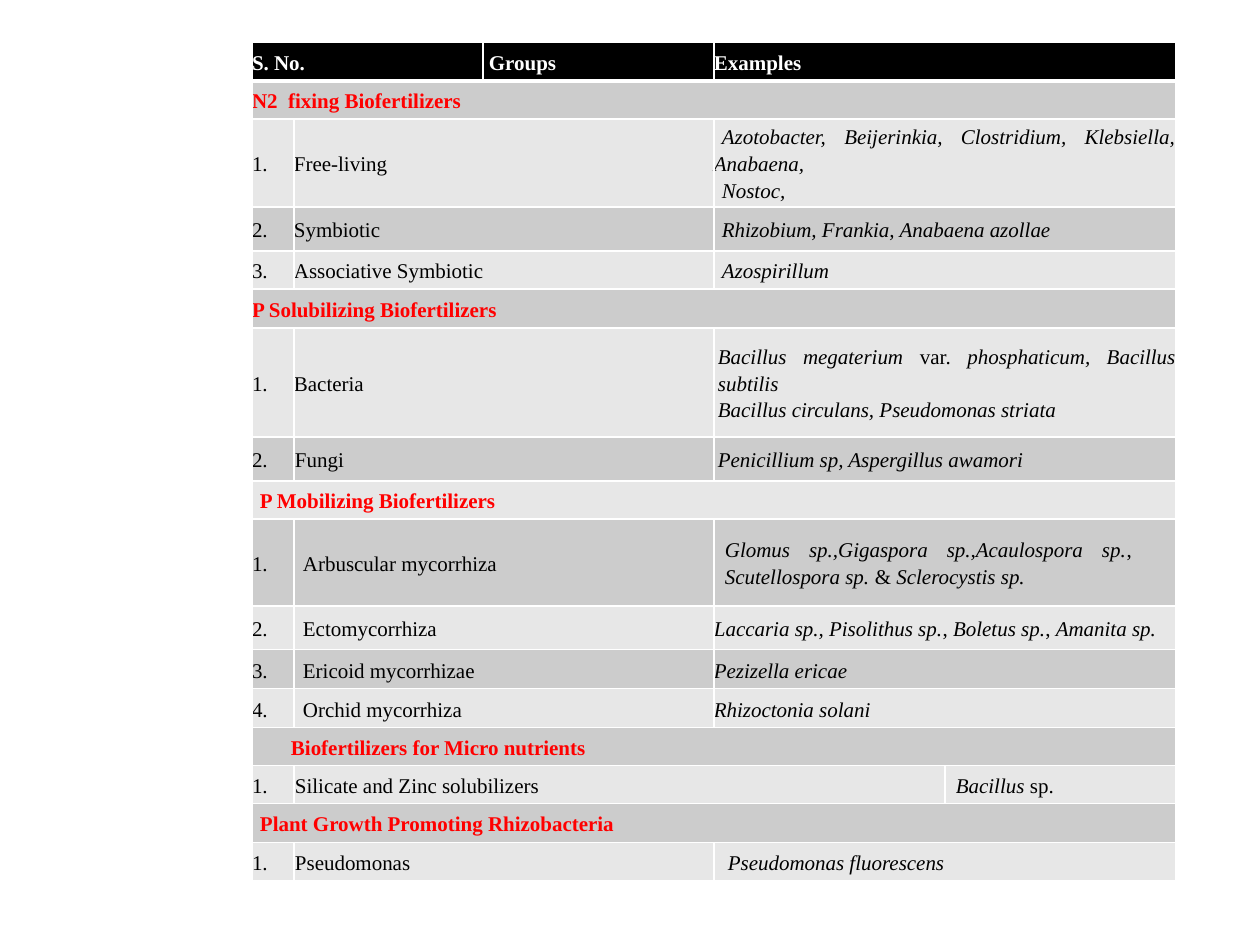
from dataclasses import dataclass

import lxml.etree
import pptx
import pptx.dml.color
import pptx.enum.text
import pptx.oxml.ns
import pptx.util

PX = 914400 // 126


@dataclass(frozen=True)
class Theme:
    font: str = "Times New Roman"
    size: int = 12
    header_fill: str = "000000"
    band_fills: tuple = ("E7E7E7", "CCCCCC")
    border: str = "FFFFFF"
    header_text: str = "FFFFFF"
    section_text: str = "FF0000"
    body_text: str = "000000"


@dataclass(frozen=True)
class Entry:
    """Cell text: *stars* mark italics, \\n a new paragraph, \\v a line break."""
    text: str
    left: int = 0
    first: int = 0
    right: int = 0


def header(*entries):
    return "header", 39, zip(((0, 1), (2, 2), (3, 4)), entries)


def section(height, text, **indents):
    return "section", height, [((0, 4), Entry(text, **indents))]


def item(height, number, group, example, split=3):
    """A numbered row whose example starts at column split."""
    spans = (0, 0), (1, split - 1), (split, 4)
    return "body", height, list(zip(spans, (Entry(number), group, example)))


COLUMNS = [42, 189, 231, 231, 231]
ROWS = [
    header(Entry("S. No."), Entry("Groups", first=6), Entry("Examples")),
    section(38, "N2  fixing Biofertilizers"),
    item(88, "1.", Entry("Free-living"),
         Entry("*Azotobacter, Beijerinkia, Clostridium, Klebsiella, Anabaena,*\n*Nostoc,*", first=8)),
    item(44, "2.", Entry("Symbiotic"), Entry("*Rhizobium, Frankia, Anabaena azollae*", first=8)),
    item(38, "3.", Entry("Associative Symbiotic"), Entry("*Azospirillum*", first=8)),
    section(39, "P Solubilizing Biofertilizers"),
    item(109, "1.", Entry("Bacteria", left=1, first=-1),
         Entry("*Bacillus megaterium* var. *phosphaticum, Bacillus subtilis\v"
               "Bacillus circulans, Pseudomonas striata*", left=4)),
    item(44, "2.", Entry("Fungi", left=1),
         Entry("*Penicillium sp, Aspergillus awamori*", first=4)),
    section(38, "P Mobilizing Biofertilizers", left=8),
    item(87, "1.", Entry("Arbuscular mycorrhiza", left=9),
         Entry("*Glomus sp.,Gigaspora sp.,Acaulospora sp.*, \v"
               "*Scutellospora sp. *& *Sclerocystis sp.*", left=11, right=25)),
    item(44, "2.", Entry("Ectomycorrhiza", left=9),
         Entry("*Laccaria sp., Pisolithus sp.*, *Boletus sp.*, *Amanita sp.*")),
    item(39, "3.", Entry("Ericoid mycorrhizae", left=9), Entry("*Pezizella ericae*")),
    item(39, "4.", Entry("Orchid mycorrhiza", left=9), Entry("*Rhizoctonia solani*")),
    section(38, "Biofertilizers for Micro nutrients", first=39),
    item(38, "1.", Entry("Silicate and Zinc solubilizers", left=1),
         Entry("*Bacillus* sp.", left=11), split=4),
    section(39, "Plant Growth Promoting Rhizobacteria", left=8),
    item(38, "1.", Entry("Pseudomonas", left=1), Entry("*Pseudomonas fluorescens*", left=14)),
]


class SlideBuilder:
    def __init__(self, page, theme):
        self.page = page
        self.theme = theme

    def table(self, left, top, columns, rows):
        heights = [height for _, height, _ in rows]
        frame = self.page.shapes.add_table(
            len(rows), len(columns), left * PX, top * PX, sum(columns) * PX, sum(heights) * PX)
        table = frame.table
        table.horz_banding = False
        for column, width in zip(table.columns, columns):
            column.width = width * PX
        for index, (kind, height, entries) in enumerate(rows):
            table.rows[index].height = height * PX
            is_header = kind == "header"
            fill = self.theme.header_fill if is_header else self.theme.band_fills[index % 2]
            for column in range(len(columns)):
                self.cell_style(table.cell(index, column), fill, 3 if is_header else 1)
            for (start, end), entry in entries:
                cell = table.cell(index, start)
                if end > start:
                    cell.merge(table.cell(index, end))
                self.cell_text(cell, entry, kind)

    def cell_style(self, cell, fill, bottom_width):
        cell.margin_left = cell.margin_right = cell.margin_top = cell.margin_bottom = 0
        cell.vertical_anchor = pptx.enum.text.MSO_ANCHOR.MIDDLE
        qn = pptx.oxml.ns.qn
        properties = cell._tc.get_or_add_tcPr()
        for side, width in (("L", 1), ("R", 1), ("T", 1), ("B", bottom_width)):
            line = lxml.etree.SubElement(properties, qn(f"a:ln{side}"), w=str(width * 12700))
            solid = lxml.etree.SubElement(line, qn("a:solidFill"))
            lxml.etree.SubElement(solid, qn("a:srgbClr"), val=self.theme.border)
        cell.fill.solid()
        cell.fill.fore_color.rgb = pptx.dml.color.RGBColor.from_string(fill)

    def cell_text(self, cell, entry, kind):
        frame = cell.text_frame
        for index, text in enumerate(entry.text.split("\n")):
            para = frame.add_paragraph() if index else frame.paragraphs[0]
            para.alignment = pptx.enum.text.PP_ALIGN.JUSTIFY
            para.line_spacing = 1.15
            properties = para._p.get_or_add_pPr()
            for name, value in (("marL", entry.left), ("marR", entry.right), ("indent", entry.first)):
                properties.set(name, str(value * PX))
            for order, piece in enumerate(text.split("*")):
                self.spans(para, piece, order % 2 == 1, kind)

    def spans(self, para, text, italic, kind):
        colors = {"header": self.theme.header_text, "section": self.theme.section_text,
                  "body": self.theme.body_text}
        for index, part in enumerate(text.split("\v")):
            if index:
                para.add_line_break()
                lxml.etree.SubElement(para._p[-1], pptx.oxml.ns.qn("a:rPr"),
                                      sz=str(self.theme.size * 100))
            if part:
                span = para.add_run()
                span.text = part
                span.font.name = self.theme.font
                span.font.size = pptx.util.Pt(self.theme.size)
                span.font.bold = kind != "body"
                span.font.italic = italic
                span.font.color.rgb = pptx.dml.color.RGBColor.from_string(colors[kind])


def main():
    deck = pptx.Presentation()
    deck.slide_width = 1260 * PX
    deck.slide_height = 945 * PX
    page = deck.slides.add_slide(deck.slide_layouts[6])
    SlideBuilder(page, Theme()).table(252, 42, COLUMNS, ROWS)
    deck.save("out.pptx")


if __name__ == "__main__":
    main()
